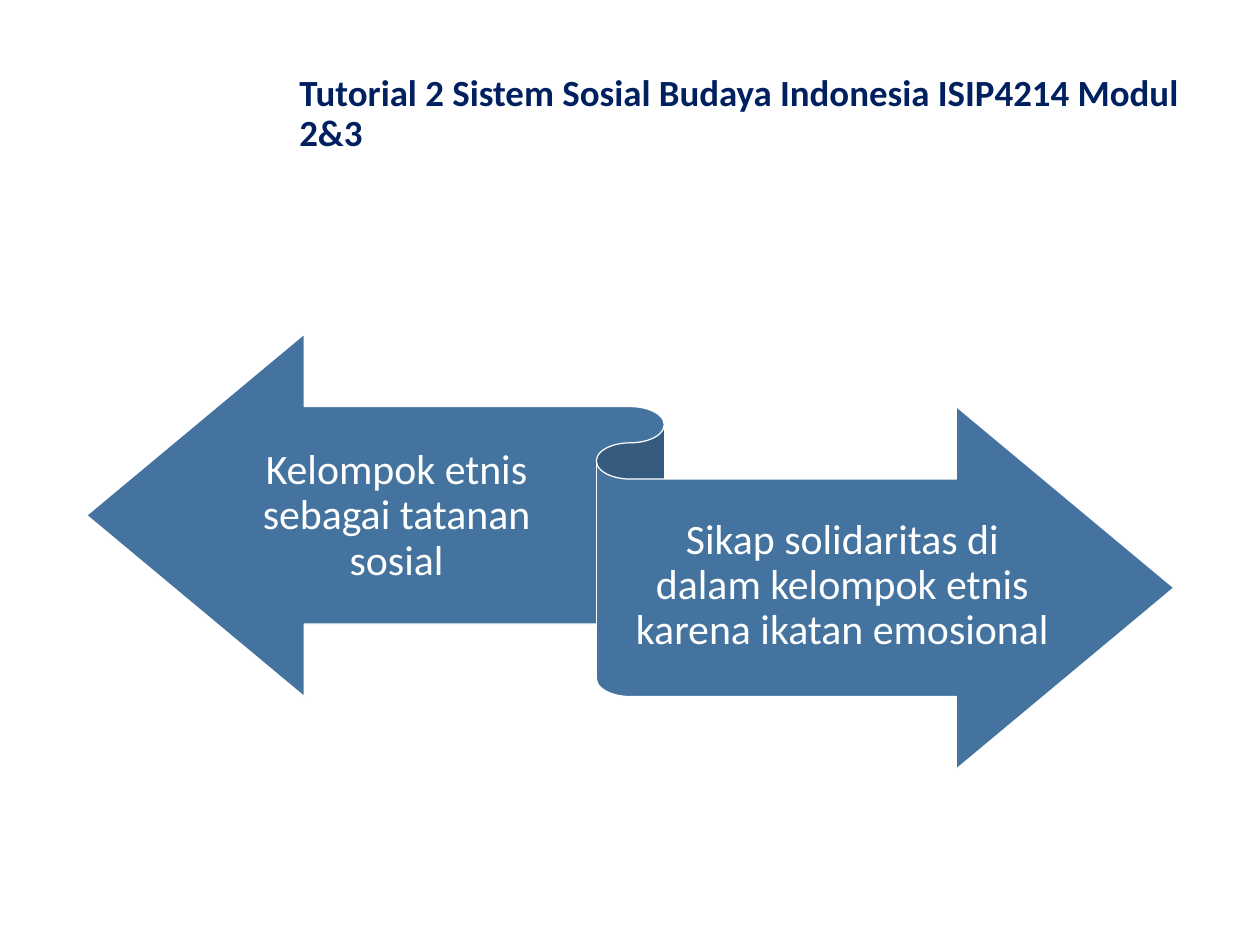
import dataclasses

import pptx
import pptx.dml.color
import pptx.enum.shapes
import pptx.enum.text
import pptx.util

Pt = pptx.util.Pt


@dataclasses.dataclass(frozen=True)
class Theme:
    """Colours, font and type sizes of the slide."""
    font: str = "Calibri"
    title_size: int = 30
    label_size: int = 34
    navy: str = "002060"
    blue: str = "43739E"
    white: str = "FFFFFF"


THEME = Theme()


def rgb(value):
    """Return the colour object for a hex value."""
    return pptx.dml.color.RGBColor.from_string(value)


def write_text(shape, text, size, color, alignment, bold=False):
    """Fill a shape with one formatted, vertically centred paragraph."""
    frame = shape.text_frame
    frame.text = text
    frame.word_wrap = True
    frame.auto_size = pptx.enum.text.MSO_AUTO_SIZE.NONE
    frame.vertical_anchor = pptx.enum.text.MSO_ANCHOR.MIDDLE
    paragraph = frame.paragraphs[0]
    paragraph.alignment = alignment
    paragraph.line_spacing = 0.9
    font = paragraph.runs[0].font
    font.name = THEME.font
    font.size = Pt(size)
    font.bold = bold
    font.color.rgb = rgb(color)


def place_title(slide, box, text):
    """Move the title placeholder into the box and format it."""
    left, top, width, height = box
    title = slide.shapes.title
    title.left, title.top = Pt(left), Pt(top)
    title.width, title.height = Pt(width), Pt(height)
    write_text(title, text, THEME.title_size, THEME.navy,
               pptx.enum.text.PP_ALIGN.LEFT, bold=True)


def add_ribbon(slide, box, left_text, right_text):
    """Draw a two-way ribbon in the box with a label on each arm."""
    left, top, width, height = box
    ribbon = slide.shapes.add_shape(
        pptx.enum.shapes.MSO_SHAPE.LEFT_RIGHT_RIBBON,
        Pt(left), Pt(top), Pt(width), Pt(height))
    ribbon.shadow.inherit = False
    ribbon.fill.solid()
    ribbon.fill.fore_color.rgb = rgb(THEME.blue)
    ribbon.line.color.rgb = rgb(THEME.white)
    ribbon.line.width = Pt(1)
    arms = ((left_text, 0.12, 0.175, 0.33), (right_text, 0.5, 0.335, 0.39))
    for text, across, down, share in arms:
        label = slide.shapes.add_textbox(
            Pt(left + across * width), Pt(top + down * height),
            Pt(share * width), Pt(0.49 * height))
        frame = label.text_frame
        frame.margin_left = frame.margin_right = 0
        frame.margin_top, frame.margin_bottom = Pt(9.5), Pt(10)
        write_text(label, text, THEME.label_size, THEME.white,
                   pptx.enum.text.PP_ALIGN.CENTER)


def main():
    """Build the slide and save it."""
    presentation = pptx.Presentation()
    presentation.slide_width, presentation.slide_height = Pt(1024), Pt(768)
    slide = presentation.slides.add_slide(
        presentation.slide_layouts.get_by_name("Title Only"))
    add_ribbon(slide, (70.5, 271.5, 883.5, 353.5),
               "Kelompok etnis sebagai tatanan sosial",
               "Sikap solidaritas di dalam kelompok etnis karena ikatan emosional")
    place_title(slide, (236, 48, 788, 90),
                "Tutorial 2 Sistem Sosial Budaya Indonesia ISIP4214 Modul 2&3")
    presentation.save("out.pptx")


if __name__ == "__main__":
    main()
